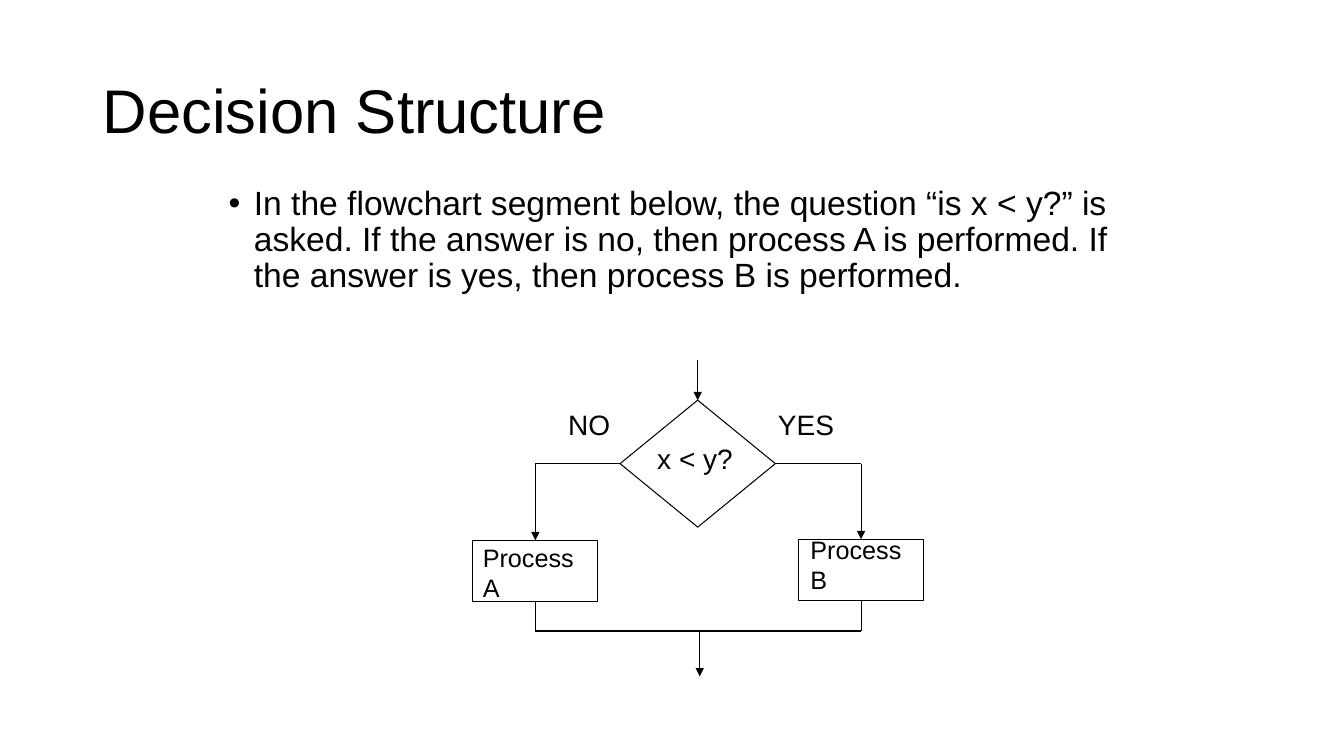
import pptx
import pptx.dml.color
import pptx.enum.shapes
import pptx.enum.text
import pptx.oxml
import pptx.oxml.ns
import pptx.util

PX = 9144
BLACK = "000000"
SHAPES = pptx.enum.shapes.MSO_SHAPE
ALIGN = pptx.enum.text.PP_ALIGN
ANCHOR = pptx.enum.text.MSO_ANCHOR
TOP, LEFT, BOTTOM, RIGHT = range(4)


def px(length):
    """Turn a length in px into EMU."""
    return pptx.util.Emu(length * PX)


def color(value):
    """Turn a hex string into a colour."""
    return pptx.dml.color.RGBColor.from_string(value)


def add_tag(parent, tag, **attributes):
    """Append a drawing element with its attributes."""
    element = pptx.oxml.parse_xml(f"<a:{tag} {pptx.oxml.ns.nsdecls('a')}/>")
    for key, value in attributes.items():
        element.set(key, value)
    parent.append(element)


def add_text(slide, box, wording, size, align=ALIGN.LEFT, anchor=ANCHOR.TOP, spacing=1.0):
    """Place a wrapped text box and return its paragraph."""
    frame = slide.shapes.add_textbox(*map(px, box)).text_frame
    frame.word_wrap = True
    frame.vertical_anchor = anchor
    paragraph = frame.paragraphs[0]
    paragraph.text = wording
    paragraph.alignment = align
    paragraph.line_spacing = spacing
    paragraph.font.size = pptx.util.Pt(size)
    paragraph.font.name = "Arial"
    paragraph.font.color.rgb = color(BLACK)
    return paragraph


def add_step(slide, preset, box):
    """Place an outlined flowchart step."""
    step = slide.shapes.add_shape(preset, *map(px, box))
    step.shadow.inherit = False
    step.fill.background()
    step.line.color.rgb = color(BLACK)
    step.line.width = pptx.util.Pt(0.75)
    return step


def add_flow(slide, start, end, source=None, target=None, arrow=False):
    """Draw a flow line, joined to (step, side) pairs where given."""
    flow = slide.shapes.add_connector(
        pptx.enum.shapes.MSO_CONNECTOR.STRAIGHT, *map(px, start + end))
    if source:
        flow.begin_connect(*source)
    if target:
        flow.end_connect(*target)
    flow.line.color.rgb = color(BLACK)
    flow.line.width = pptx.util.Pt(0.75)
    if arrow:
        add_tag(flow.line._get_or_add_ln(), "tailEnd", type="triangle")
    add_tag(flow._element.spPr, "effectLst")


def add_title(slide, box):
    """Place the slide title."""
    add_text(slide, box, "Decision Structure", 44, anchor=ANCHOR.MIDDLE, spacing=0.9)


def add_explanation(slide, box):
    """Place the bulleted explanation."""
    explanation = add_text(
        slide, box,
        "In the flowchart segment below, the question “is x < y?” is asked. "
        "If the answer is no, then process A is performed. "
        "If the answer is yes, then process B is performed.", 24, spacing=0.9)
    explanation.space_before = pptx.util.Pt(10)
    properties = explanation._p.get_or_add_pPr()
    properties.set("marL", str(px(25)))
    properties.set("indent", str(px(-25)))
    add_tag(properties, "buFont", typeface="Arial")
    add_tag(properties, "buChar", char="•")


def add_flowchart(slide, box):
    """Place the decision, its two branches and the merge."""
    left, top, width, height = box
    decision_x, decision_y = left + 223, top + 103
    merge_x, merge_y = left + 225, top + 269
    decision = add_step(slide, SHAPES.FLOWCHART_DECISION, (left + 146, top + 40, 154, 126))
    add_flow(slide, (decision_x, top), (decision_x, top + 40),
             target=(decision, TOP), arrow=True)

    branches = (
        ("Process A", left, top + 179, LEFT, 146, (0, 176, 124, 71), "NO", 74),
        ("Process B", left + 323, top + 178, RIGHT, 300, (325, 168, 114, 71), "YES", 289),
    )
    exits = []
    for name, step_x, step_y, side, corner, name_box, answer, answer_x in branches:
        process = add_step(slide, SHAPES.RECTANGLE, (step_x, step_y, 124, 61))
        middle = step_x + 62
        exits.append((middle, merge_y))
        add_flow(slide, (left + corner, decision_y), (middle, decision_y),
                 source=(decision, side))
        add_flow(slide, (middle, decision_y), (middle, step_y),
                 target=(process, TOP), arrow=True)
        add_flow(slide, (middle, step_y + 61), (middle, merge_y), source=(process, BOTTOM))
        name_x, name_y, *name_size = name_box
        add_text(slide, (left + name_x, top + name_y, *name_size), name, 18)
        add_text(slide, (left + answer_x, top + 42, 83, 43), answer, 20, ALIGN.CENTER)

    add_flow(slide, *exits)
    add_flow(slide, (merge_x, merge_y), (merge_x, top + height), arrow=True)
    add_text(slide, (left + 173, top + 76, 108, 44), "x < y?", 20)


def main():
    """Build and save the slide."""
    deck = pptx.Presentation()
    deck.slide_width, deck.slide_height = px(1333), px(750)
    slide = deck.slides.add_slide(deck.slide_layouts[6])
    add_title(slide, (92, 40, 1150, 145))
    add_explanation(slide, (217, 180, 900, 495))
    add_flowchart(slide, (469, 357, 448, 314))
    deck.save("out.pptx")


if __name__ == "__main__":
    main()
